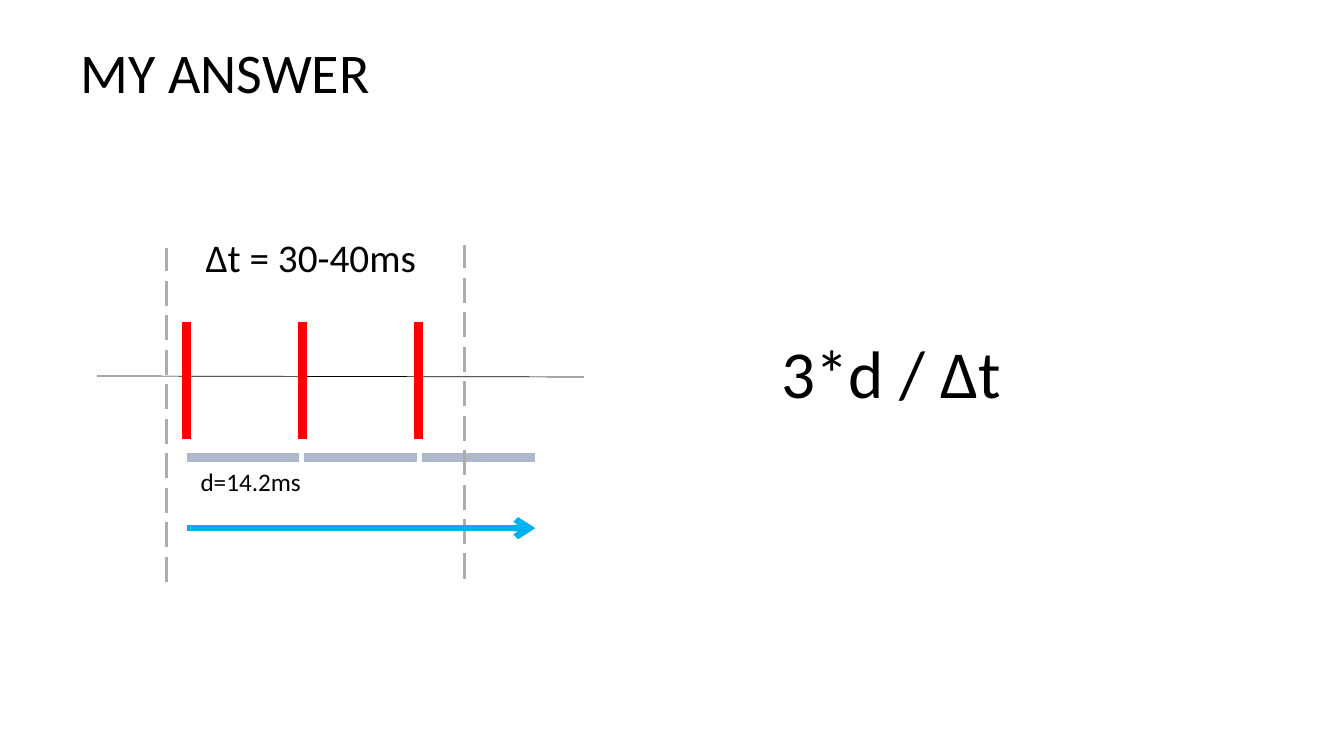
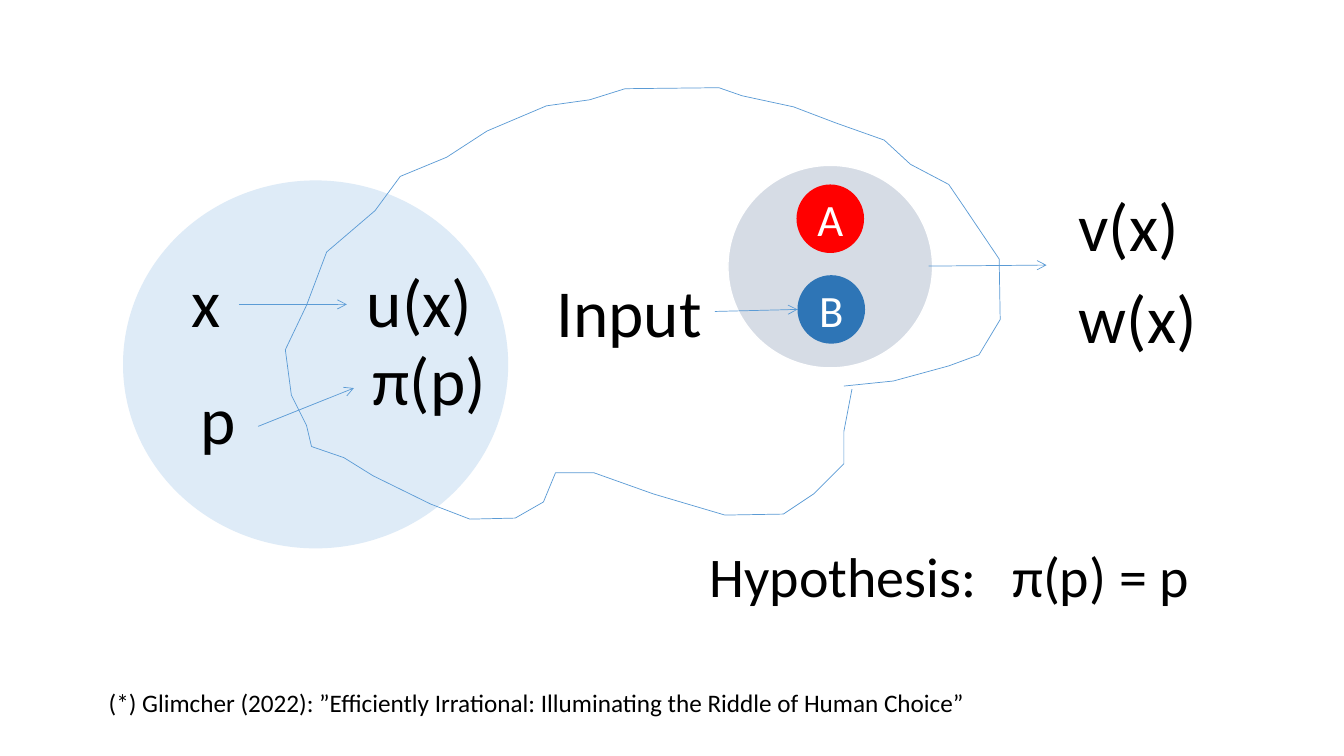
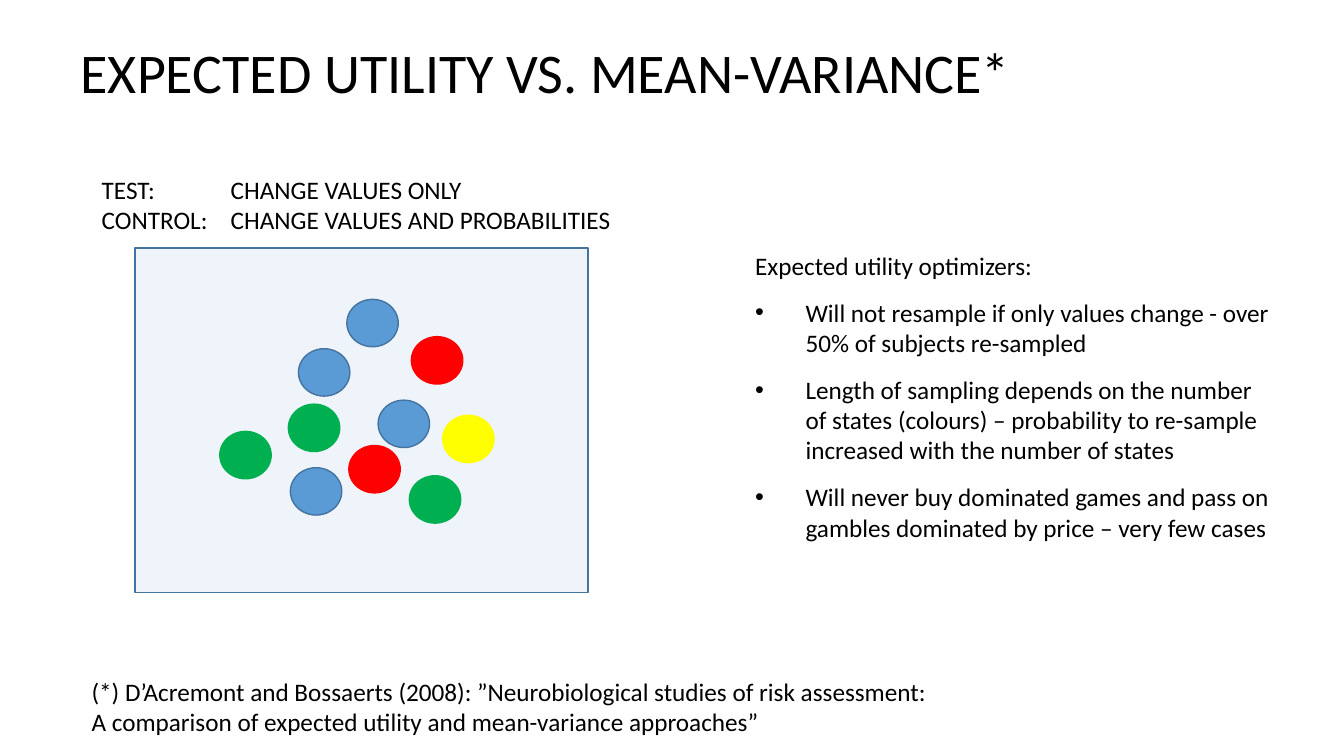
from lxml import etree
from pptx import Presentation
from pptx.dml.color import RGBColor
from pptx.enum.dml import MSO_LINE_DASH_STYLE as Dash
from pptx.enum.shapes import MSO_CONNECTOR_TYPE as Connector, MSO_SHAPE as Shape
from pptx.enum.text import MSO_ANCHOR as Anchor, MSO_AUTO_SIZE as AutoSize, PP_ALIGN as Align
from pptx.oxml.ns import qn
from pptx.util import Inches, Pt

FONT = "Calibri"
BLACK = RGBColor.from_string("000000")
WHITE = RGBColor.from_string("FFFFFF")
RED = RGBColor.from_string("FF0000")
GREEN = RGBColor.from_string("00B050")
YELLOW = RGBColor.from_string("FFFF00")
BLUE = RGBColor.from_string("5B9BD5")
BLUE_EDGE = RGBColor.from_string("43739E")
DEEP_BLUE = RGBColor.from_string("2E75B6")
PALE_BLUE = RGBColor.from_string("DEEBF7")
SKY = RGBColor.from_string("00B0F0")
SLATE = RGBColor.from_string("ADB9CA")
PALE_SLATE = RGBColor.from_string("D6DCE5")
GRAY = RGBColor.from_string("AFABAB")

# Spike train: one red spike and one duration bar per event
EVENTS = 3
TRAIN_LEFT, TRAIN_END = 1.85, 5.31
SPIKE_STEP, BAR_STEP, BAR_WIDTH = 1.15, 1.17, 1.12
WINDOW_EDGES = [(1.65, 2.46), (4.61, 2.43)]
WINDOW_HEIGHT = 3.31
TRAIN_LABELS = [
    ("d=14.2ms", (1.89, 4.58, 1.21, 0.4), 18),
    ("Δt = 30-40ms", (1.94, 2.27, 2.32, 0.57), 28),
    ("3*d / Δt", (7.65, 3.24, 2.56, 0.91), 48),
]

BRAIN = [
    (8.37, 3.83), (8.86, 3.78), (9.41, 3.63), (9.71, 3.52), (9.92, 3.17), (9.91, 2.57),
    (9.58, 2.08), (9.41, 1.83), (9.03, 1.63), (8.77, 1.39), (8.29, 1.22), (7.87, 1.06),
    (7.36, 0.95), (7.13, 0.87), (6.2, 0.88), (5.85, 0.99), (5.42, 1.05), (4.83, 1.3),
    (4.43, 1.56), (3.97, 1.75), (3.72, 2.09), (3.24, 2.5), (3.04, 3.03), (2.83, 3.47),
    (2.89, 3.92), (3.04, 4.22), (3.09, 4.43), (3.41, 4.54), (3.7, 4.72), (4.27, 5),
    (4.66, 5.15), (5.11, 5.14), (5.39, 4.98), (5.51, 4.69), (5.89, 4.69), (6.48, 4.9),
    (7.19, 5.11), (7.77, 5.1), (8.07, 4.9), (8.37, 4.6), (8.37, 4.28), (8.45, 3.86),
]
VARIABLE_HEIGHT = 0.91
VARIABLES = [
    ("x", 1.8, 2.53, 0.49),
    ("p", 1.89, 3.69, 0.56),
    ("π(p)", 3.6, 3.31, 1.33),
    ("u(x)", 3.54, 2.53, 1.25),
    ("v(x)", 10.6, 1.78, 1.2),
    ("w(x)", 10.6, 2.69, 1.38),
    ("Input", 5.42, 2.63, 1.66),
]
FLOWS = [
    ((2.37, 3.02), (3.44, 3.02)),
    ((2.56, 4.23), (3.51, 3.85)),
    ((9.21, 2.64), (10.38, 2.63)),
    ((7.09, 3.09), (7.91, 3.07)),
]
NODE_SIZE = (0.67, 0.68)
NODES = [("A", (7.9, 1.83), RED), ("B", (7.91, 2.73), DEEP_BLUE)]
BRAIN_SOURCE = "(*) Glimcher (2022): ”Efficiently Irrational: Illuminating the Riddle of Human Choice”"

# Urn: ball corners grouped by fill and edge colour
BALL_SIZE = (0.51, 0.47)
BALLS = [
    (BLUE, BLUE_EDGE, [(2.96, 3.46), (3.75, 3.97), (3.44, 2.97), (2.88, 4.64)]),
    (GREEN, GREEN, [(2.86, 4.01), (4.06, 4.72), (2.18, 4.28)]),
    (RED, RED, [(3.46, 4.42), (4.08, 3.34)]),
    (YELLOW, YELLOW, [(4.39, 4.12)]),
]
CONDITIONS = ["TEST:\tCHANGE VALUES ONLY", "CONTROL:\tCHANGE VALUES AND PROBABILITIES"]
FINDINGS_HEAD = "Expected utility optimizers:"
FINDINGS = [
    "Will not resample if only values change - over 50% of subjects re-sampled",
    "Length of sampling depends on the number of states (colours) – probability to re-sample "
    "increased with the number of states",
    "Will never buy dominated games and pass on gambles dominated by price – very few cases",
]
URN_SOURCE = [
    "(*) D’Acremont and Bossaerts (2008): ”Neurobiological studies of risk assessment:",
    "A comparison of expected utility and mean-variance approaches”",
]


def fill_frame(frame, lines, size, color=BLACK, align=Align.LEFT, gap=0, tab=None, bullets_from=None):
    """Write one paragraph per line; lines from index bullets_from on get a bullet."""
    for index, line in enumerate(lines):
        para = frame.add_paragraph() if index else frame.paragraphs[0]
        para.alignment = align
        if index and gap:
            para.space_before = Pt(gap)
        props = para._p.get_or_add_pPr()
        if bullets_from is not None and index >= bullets_from:
            props.set("marL", str(Inches(0.5)))
            props.set("indent", str(-Inches(0.5)))
            etree.SubElement(props, qn("a:buFont"), typeface="Arial")
            etree.SubElement(props, qn("a:buChar"), char="•")
        if tab:
            stops = etree.SubElement(props, qn("a:tabLst"))
            etree.SubElement(stops, qn("a:tab"), pos=str(Inches(tab)), algn="l")
        span = para.add_run()
        span.text = line
        span.font.name, span.font.size, span.font.color.rgb = FONT, Pt(size), color


def add_text(page, lines, area, size, wrap=False, inset=(0.1, 0.05), **style):
    box = page.shapes.add_textbox(*map(Inches, area))
    frame = box.text_frame
    frame.word_wrap = wrap
    frame.auto_size = AutoSize.NONE if wrap else AutoSize.SHAPE_TO_FIT_TEXT
    frame.margin_left = frame.margin_right = Inches(inset[0])
    frame.margin_top = frame.margin_bottom = Inches(inset[1])
    fill_frame(frame, [lines] if isinstance(lines, str) else lines, size, **style)


def add_title(page, title):
    add_text(page, title, (0.67, 0.3, 12, 0.77), 40, wrap=True, inset=(0.13, 0.07))


def add_line(page, start, end, color, width, dash=None, arrow=False):
    line = page.shapes.add_connector(Connector.STRAIGHT, *map(Inches, start + end))
    line.line.color.rgb, line.line.width = color, Pt(width)
    if dash:
        line.line.dash_style = dash
    if arrow:
        etree.SubElement(line.line._get_or_add_ln(), qn("a:tailEnd"), type="arrow")
    etree.SubElement(line._element.spPr, qn("a:effectLst"))


def add_shape(page, kind, area, fill, edge=None, opacity=None, label=None):
    shape = page.shapes.add_shape(kind, *map(Inches, area))
    shape.shadow.inherit = False
    shape.fill.solid()
    shape.fill.fore_color.rgb = fill
    if opacity:
        color = shape._element.spPr.find(".//" + qn("a:srgbClr"))
        etree.SubElement(color, qn("a:alpha"), val=str(opacity * 1000))
    if edge is None:
        shape.line.fill.background()
    else:
        shape.line.color.rgb, shape.line.width = edge, Pt(1)
    if label:
        frame = shape.text_frame
        frame.margin_left = frame.margin_right = frame.margin_top = frame.margin_bottom = 0
        frame.vertical_anchor = Anchor.MIDDLE
        fill_frame(frame, [label], 32, color=WHITE, align=Align.CENTER)


def add_outline(page, points, color, width):
    """Draw an open line through points given in inches."""
    first, *rest = [(Inches(x), Inches(y)) for x, y in points]
    builder = page.shapes.build_freeform(*first)
    builder.add_line_segments(rest, close=False)
    outline = builder.convert_to_shape()
    outline.shadow.inherit = False
    outline.fill.background()
    outline.line.color.rgb, outline.line.width = color, Pt(width)


def build_answer(page):
    add_title(page, "MY ANSWER")
    add_line(page, (0.96, 3.73), (5.79, 3.74), BLACK, 0.5)
    for event in range(EVENTS):
        spike = TRAIN_LEFT + event * SPIKE_STEP
        bar = TRAIN_LEFT + event * BAR_STEP
        add_line(page, (spike, 3.19), (spike, 4.36), RED, 6)
        add_line(page, (bar, 4.54), (bar + BAR_WIDTH, 4.54), SLATE, 6)
    for left, top in WINDOW_EDGES:
        add_line(page, (left, top + WINDOW_HEIGHT), (left, top), GRAY, 2.25, dash=Dash.LONG_DASH)
    add_line(page, (TRAIN_LEFT, 5.24), (TRAIN_END, 5.24), SKY, 4.5, arrow=True)
    for label, area, size in TRAIN_LABELS:
        add_text(page, label, area, size)


def build_brain(page):
    add_shape(page, Shape.OVAL, (1.22, 1.79, 3.82, 3.65), PALE_BLUE)
    add_outline(page, BRAIN, BLUE, 0.5)
    add_shape(page, Shape.OVAL, (7.22, 1.64, 2.03, 2.01), PALE_SLATE, edge=WHITE)
    for label, corner, color in NODES:
        add_shape(page, Shape.OVAL, corner + NODE_SIZE, color, label=label)
    for label, left, top, width in VARIABLES:
        add_text(page, label, (left, top, width, VARIABLE_HEIGHT), 48)
    for start, end in FLOWS:
        add_line(page, start, end, BLUE, 0.5, arrow=True)
    add_text(page, "Hypothesis:\tπ(p) = p", (6.94, 5.32, 5.2, 0.77), 40, wrap=True, tab=3)
    add_text(page, BRAIN_SOURCE, (0.98, 6.77, 8.8, 0.4), 18)


def build_urn(page):
    add_shape(page, Shape.RECTANGLE, (1.34, 2.46, 4.49, 3.42), BLUE, edge=BLUE_EDGE, opacity=10)
    add_title(page, "EXPECTED UTILITY VS. MEAN-VARIANCE*")
    for fill, edge, corners in BALLS:
        for corner in corners:
            add_shape(page, Shape.OVAL, corner + BALL_SIZE, fill, edge=edge)
    add_text(page, CONDITIONS, (0.91, 1.68, 5.55, 0.71), 18, wrap=True, tab=1.28)
    add_text(page, [FINDINGS_HEAD] + FINDINGS, (7.36, 2.41, 5.38, 3.23), 18, wrap=True,
             inset=(0.13, 0.07), gap=12, bullets_from=1)
    add_text(page, URN_SOURCE, (0.81, 6.66, 8.7, 0.71), 18)


def main():
    deck = Presentation()
    deck.slide_width, deck.slide_height = Inches(13.33), Inches(7.5)
    blank = deck.slide_layouts[6]
    for build in (build_answer, build_brain, build_urn):
        build(deck.slides.add_slide(blank))
    deck.save("out.pptx")


if __name__ == "__main__":
    main()
